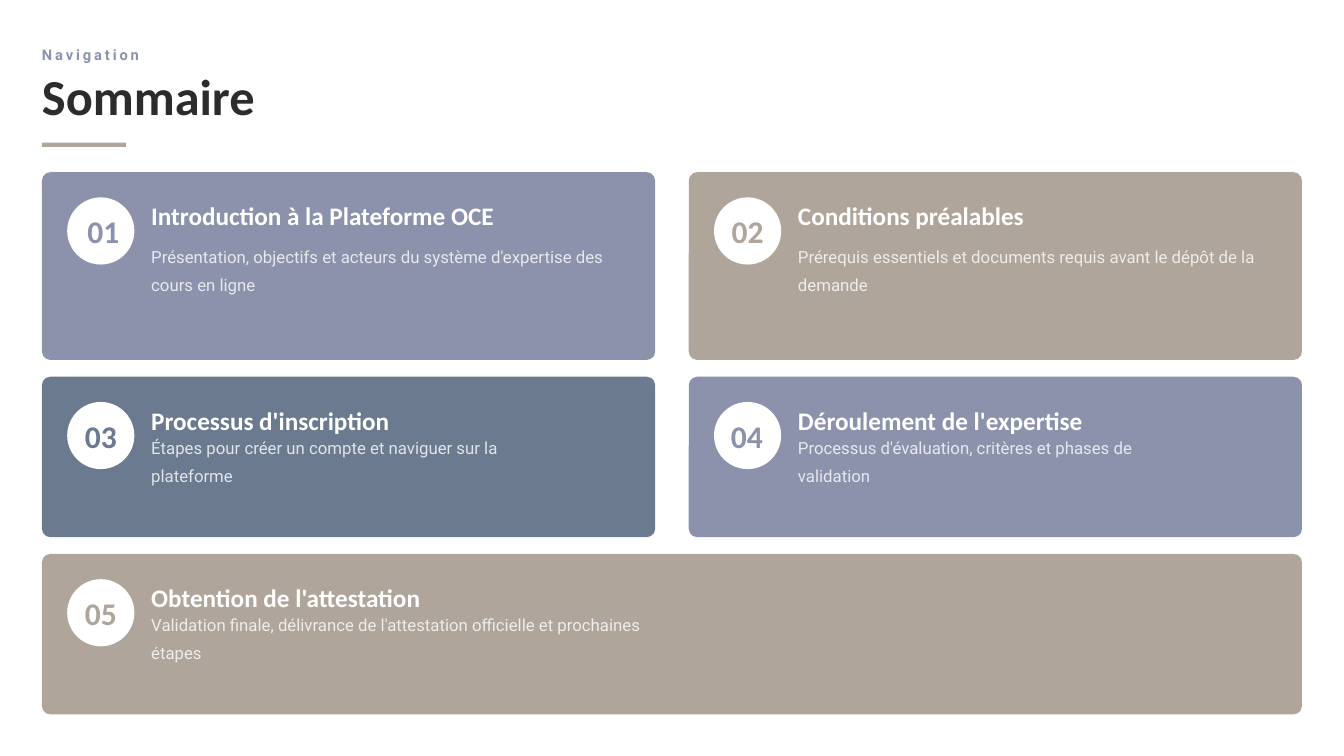
from lxml import etree
from pptx import Presentation, util as u
from pptx.dml import color
from pptx.enum import shapes, text
from pptx.oxml import ns

UNIT = u.Inches(1) / 12
MARGIN, COLUMN, GUTTER, ROW_GAP = 5, 73, 4, 2
TOP, ROW_HEIGHTS = 20.5, (22.35, 19.1, 19.1)
INSET, BADGE, TEXT_LEFT = 3, 8, 13
PERIWINKLE, TAUPE, SLATE, WHITE, INK = "8C92AC", "B0A59A", "6B7A8F", "FFFFFF", "2C2C2C"

EYEBROW = dict(name="Roboto", size=u.Pt(10.5), bold=True)
TITLE = dict(name="Calibri", size=u.Pt(36), bold=True)
NUMBER = dict(name="Calibri", size=u.Pt(22.5), bold=True)
HEADING = dict(name="Calibri", size=u.Pt(18), bold=True)
SUMMARY = dict(name="Roboto", size=u.Pt(12), bold=False)

# row, column, columns spanned, colour, number, number left, summary width, summary lines, heading, summary
CHAPTERS = [
    (0, 0, 1, PERIWINKLE, "01", 5.4, 58, 2, "Introduction à la Plateforme OCE",
     "Présentation, objectifs et acteurs du système d'expertise des cours en ligne"),
    (0, 1, 1, TAUPE, "02", 5.1, 58, 2, "Conditions préalables",
     "Prérequis essentiels et documents requis avant le dépôt de la demande"),
    (1, 0, 1, SLATE, "03", 5.1, 51.2, 1, "Processus d'inscription",
     "Étapes pour créer un compte et naviguer sur la plateforme"),
    (1, 1, 1, PERIWINKLE, "04", 5, 48.2, 1, "Déroulement de l'expertise",
     "Processus d'évaluation, critères et phases de validation"),
    (2, 0, 2, TAUPE, "05", 5.1, 64, 1, "Obtention de l'attestation",
     "Validation finale, délivrance de l'attestation officielle et prochaines étapes"),
]


def rgb(value):
    return color.RGBColor.from_string(value)


def grid(*units):
    return [u.Emu(round(n * UNIT)) for n in units]


def write(holder, wording, style, tint, spacing=1.0):
    frame = holder.text_frame
    settings = dict(margin_left=0, margin_top=0, margin_right=0, margin_bottom=0, word_wrap=True,
                    auto_size=text.MSO_AUTO_SIZE.NONE, vertical_anchor=text.MSO_ANCHOR.MIDDLE)
    for key, value in settings.items():
        setattr(frame, key, value)
    line = frame.paragraphs[0]
    line.alignment, line.line_spacing = text.PP_ALIGN.LEFT, spacing
    run = line.add_run()
    run.text = wording
    for key, value in style.items():
        setattr(run.font, key, value)
    run.font.color.rgb = rgb(tint)
    return run


def label(slide, box, *content):
    return write(slide.shapes.add_textbox(*grid(*box)), *content)


def panel(slide, kind, box, tint):
    shape = slide.shapes.add_shape(kind, *grid(*box))
    shape.shadow.inherit = False
    shape.fill.solid()
    shape.fill.fore_color.rgb = rgb(tint)
    shape.line.fill.background()
    return shape


def header(slide, left, top, width):
    eyebrow = label(slide, (left, top, width, 2.5), "Navigation", EYEBROW, PERIWINKLE, 1.2)
    eyebrow.font._element.set("spc", "210")
    title = slide.shapes.title
    title.left, title.top, title.width, title.height = grid(left, top + 4, width, 6)
    write(title, "Sommaire", TITLE, INK, 0.8)
    panel(slide, shapes.MSO_SHAPE.RECTANGLE, (left, top + 12, 10, 0.5), TAUPE)


def card(slide, box, tint, number, number_left, summary_width, lines, heading, summary):
    left, top, width, height = box
    back = panel(slide, shapes.MSO_SHAPE.ROUNDED_RECTANGLE, box, tint)
    back.adjustments[0] = 1 / min(width, height)
    inner, text_left = top + INSET, left + TEXT_LEFT
    panel(slide, shapes.MSO_SHAPE.OVAL, (left + INSET, inner, BADGE, BADGE), WHITE)
    label(slide, (left + number_left, inner + 1.75, 5.6, 4.5), number, NUMBER, tint)
    label(slide, (text_left, inner, summary_width + 0.6, 4), heading, HEADING, WHITE, 1.1)
    detail = label(slide, (text_left, inner + 5, summary_width, 3.25 * lines),
                   summary, SUMMARY, WHITE, 1.4)
    tone = detail.font._element.find(".//" + ns.qn("a:srgbClr"))
    etree.SubElement(tone, ns.qn("a:alpha"), val="80000")


def chapters(slide, left, top):
    for row, column, span, *content in CHAPTERS:
        card_left = left + column * (COLUMN + GUTTER)
        card_top = top + sum(ROW_HEIGHTS[:row]) + row * ROW_GAP
        card_width = span * COLUMN + (span - 1) * GUTTER
        card(slide, (card_left, card_top, card_width, ROW_HEIGHTS[row]), *content)


def main():
    deck = Presentation()
    deck.slide_width, deck.slide_height = grid(160, 90)
    slide = deck.slides.add_slide(deck.slide_layouts[5])
    header(slide, MARGIN, 5, 2 * COLUMN + GUTTER)
    chapters(slide, MARGIN, TOP)
    deck.save("out.pptx")


if __name__ == "__main__":
    main()
